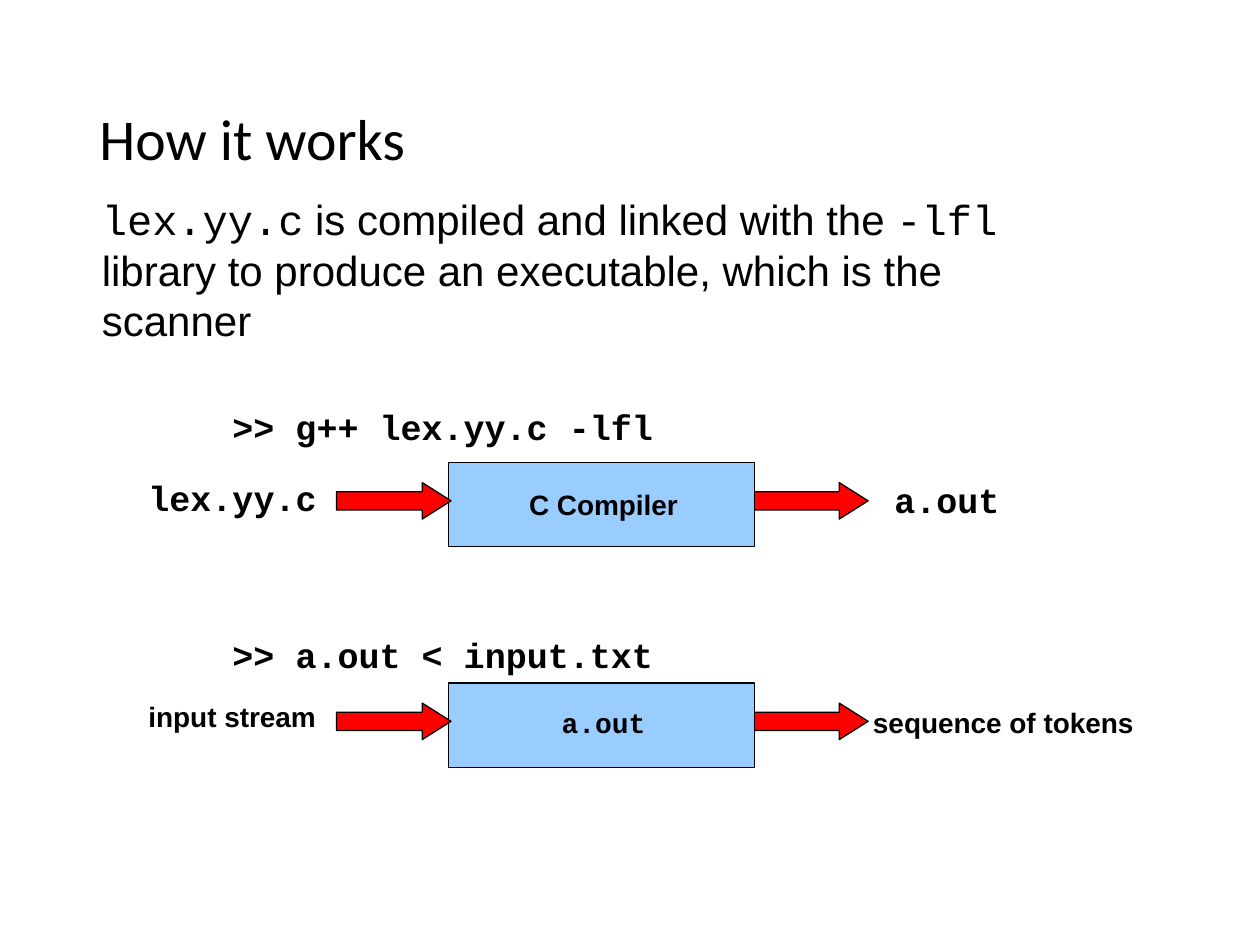
"""Build the slide showing how a generated scanner is compiled and run."""
from pptx import Presentation
from pptx.dml.color import RGBColor
from pptx.enum import shapes, text
from pptx.util import Inches, Pt

SANS, MONO, HEADING = "Arial", "Courier New", "Calibri"
BLACK, RED, BLUE = "000000", "FF0000", "99CCFF"

TITLE = "How it works"
INTRO = [
    ("lex.yy.c", MONO),
    (" is compiled and linked with the ", SANS),
    ("-lfl", MONO),
    (" library to produce an executable, which is the scanner", SANS),
]
STAGES = [
    {
        "top": 3.67,
        "command": (" >> g++ lex.yy.c -lfl", (1.58, 3.17, 4, 0.44)),
        "source": ("lex.yy.c", MONO, 20, (1.08, 3.73, 1.67, 0.44)),
        "tool": ("C Compiler", SANS, (3.95, 3.82, 1.68, 0.37)),
        "result": ("a.out", MONO, 20, (7, 3.75, 1.6, 0.44)),
    },
    {
        "top": 5.42,
        "command": (" >> a.out < input.txt", (1.58, 4.98, 3.92, 0.44)),
        "source": ("input stream", SANS, 16, (1.08, 5.5, 1.67, 0.37)),
        "tool": ("a.out", MONO, (3.95, 5.55, 1.68, 0.37)),
        "result": ("sequence of tokens", SANS, 16, (6.83, 5.55, 2.61, 0.37)),
    },
]
BOX_LEFT, BOX_WIDTH, BOX_HEIGHT = 3.56, 2.43, 0.67
ARROW_WIDTH, ARROW_HEIGHT, ARROW_DROP = 0.91, 0.29, 0.16
ARROW_IN, ARROW_OUT = 2.67, 5.98


def color(value):
    return RGBColor.from_string(value)


def add_text(page, spans, size, place, bold=False, centered=False, before=0):
    label = page.shapes.add_textbox(*map(Inches, place))
    label.text_frame.word_wrap = True
    para = label.text_frame.paragraphs[0]
    para.alignment = text.PP_ALIGN.CENTER if centered else text.PP_ALIGN.LEFT
    para.space_before = Pt(before)
    for words, font in spans:
        span = para.add_run()
        span.text = words
        span.font.name = font
        span.font.size = Pt(size)
        span.font.bold = bold
        span.font.color.rgb = color(BLACK)
    return label


def add_block(page, kind, fill, place):
    block = page.shapes.add_shape(kind, *map(Inches, place))
    block.shadow.inherit = False
    block.fill.solid()
    block.fill.fore_color.rgb = color(fill)
    block.line.color.rgb = color(BLACK)
    block.line.width = Pt(0.75)
    return block


def add_arrow(page, left, stage_top):
    place = (left, stage_top + ARROW_DROP, ARROW_WIDTH, ARROW_HEIGHT)
    arrow = add_block(page, shapes.MSO_SHAPE.RIGHT_ARROW, RED, place)
    arrow.adjustments[0] = 0.5
    arrow.adjustments[1] = 0.79


def add_stage(page, stage):
    top = stage["top"]
    add_arrow(page, ARROW_OUT, top)
    box_place = (BOX_LEFT, top, BOX_WIDTH, BOX_HEIGHT)
    add_block(page, shapes.MSO_SHAPE.RECTANGLE, BLUE, box_place)
    add_arrow(page, ARROW_IN, top)
    command, place = stage["command"]
    add_text(page, [(command, MONO)], 20, place, bold=True, before=12.5)
    tool, font, place = stage["tool"]
    add_text(page, [(tool, font)], 16, place, bold=True, centered=True, before=10)
    for words, font, size, place in (stage["source"], stage["result"]):
        add_text(page, [(words, font)], size, place, bold=True, before=10)


def main():
    deck = Presentation()
    deck.slide_width, deck.slide_height = Inches(10), Inches(7.5)
    page = deck.slides.add_slide(deck.slide_layouts[6])
    title = add_text(page, [(TITLE, HEADING)], 33, (0.69, 0.4, 8.62, 1.45))
    title.text_frame.vertical_anchor = text.MSO_ANCHOR.MIDDLE
    title.text_frame.paragraphs[0].line_spacing = 0.9
    add_text(page, INTRO, 24, (0.71, 1.49, 7.75, 0.91), before=15)
    for stage in STAGES:
        add_stage(page, stage)
    deck.save("out.pptx")


if __name__ == "__main__":
    main()
